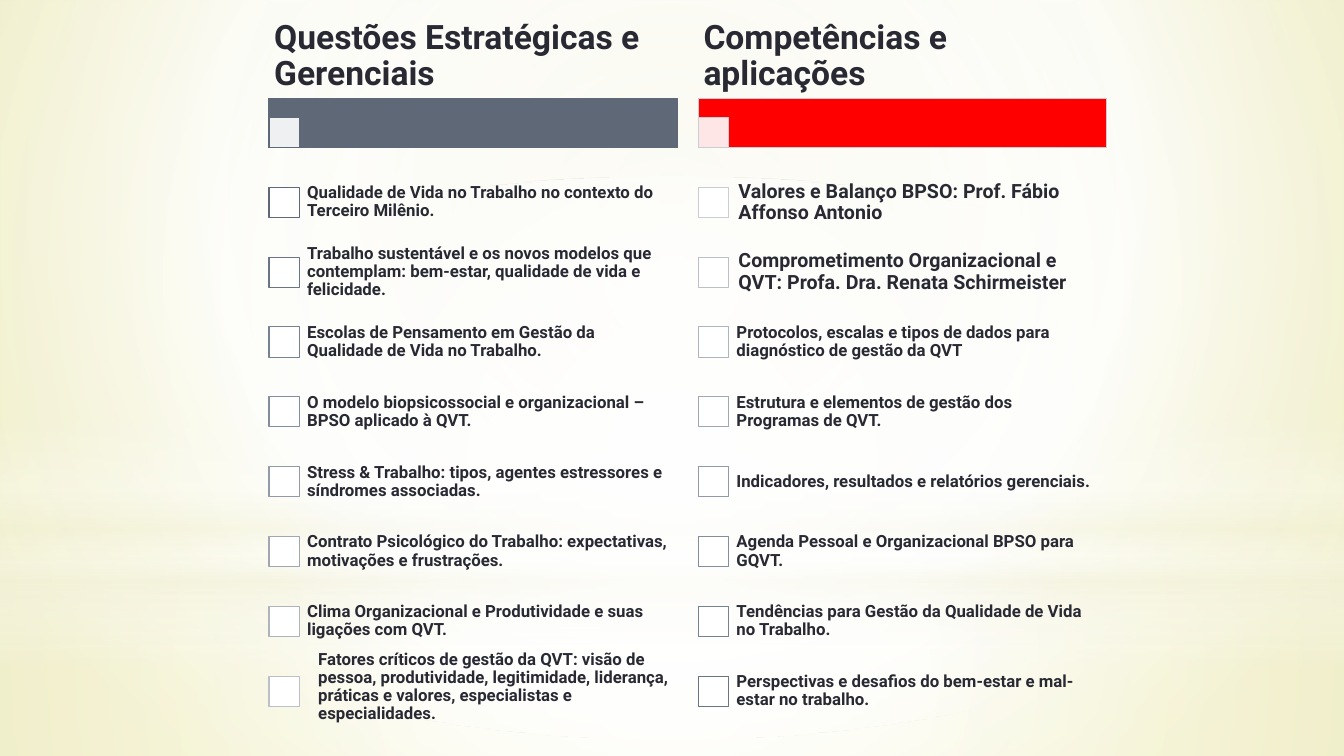
from lxml.etree import SubElement
from pptx import Presentation
from pptx.dml.color import RGBColor
from pptx.enum.shapes import MSO_SHAPE
from pptx.enum.text import MSO_ANCHOR
from pptx.oxml.ns import qn
from pptx.util import Cm, Pt

WIDE, HIGH = 33.87, 19.05
SIDE = 0.76
PITCH = 1.76
CENTER = (50, 50, 50, 50)
SHADES = ["5F6876", "6A7484", "768191", "848D9C", "929AA7",
          "A0A7B2", "AEB4BD", "BBC0C8", "C9CDD4"]

ISSUES = [
    "Qualidade de Vida no Trabalho no contexto do Terceiro Milênio.",
    "Trabalho sustentável e os novos modelos que contemplam: bem-estar, qualidade de vida e felicidade.",
    "Escolas de Pensamento em Gestão da Qualidade de Vida no Trabalho.",
    "O modelo biopsicossocial e organizacional – BPSO aplicado à QVT.",
    "Stress & Trabalho: tipos, agentes estressores e síndromes associadas.",
    "Contrato Psicológico do Trabalho: expectativas, motivações e frustrações.",
    "Clima Organizacional e Produtividade e suas ligações com QVT.",
    "Fatores críticos de gestão da QVT: visão de pessoa, produtividade, legitimidade, "
    "liderança, práticas e valores, especialistas e especialidades.",
]
SKILLS = [
    "Valores e Balanço BPSO: Prof. Fábio Affonso Antonio",
    "Comprometimento Organizacional e QVT: Profa. Dra. Renata Schirmeister",
    "Protocolos, escalas e tipos de dados para diagnóstico de gestão da QVT",
    "Estrutura e elementos de gestão dos Programas de QVT.",
    "Indicadores, resultados e relatórios gerenciais.",
    "Agenda Pessoal e Organizacional BPSO para GQVT.",
    "Tendências para Gestão da Qualidade de Vida no Trabalho.",
    "Perspectivas e desafios do bem-estar e mal-estar no trabalho.",
]


def color(code):
    return RGBColor.from_string(code)


def set_alpha(clr, share):
    SubElement(clr, qn("a:alpha"), val=str(share * 1000))


def add_grad(fill, root, stops, focus=None):
    fill.gradient()
    grad = next(root.iter(qn("a:gradFill")))
    for child in list(grad):
        grad.remove(child)
    gs_list = SubElement(grad, qn("a:gsLst"))
    for place, code, share in stops:
        stop = SubElement(gs_list, qn("a:gs"), pos=str(place * 1000))
        set_alpha(SubElement(stop, qn("a:srgbClr"), val=code), share)
    if focus:
        track = SubElement(grad, qn("a:path"), path="circle")
        sides = {side: str(n * 1000) for side, n in zip("ltrb", focus)}
        SubElement(track, qn("a:fillToRect"), **sides)
    else:
        SubElement(grad, qn("a:lin"), ang="5400000", scaled="0")


def add_block(slide, box, fill=None, line=None, alpha=None, kind=MSO_SHAPE.RECTANGLE):
    block = slide.shapes.add_shape(kind, *map(Cm, box))
    block.shadow.inherit = False
    if fill:
        block.fill.solid()
        block.fill.fore_color.rgb = color(fill)
        if alpha:
            set_alpha(next(block._element.spPr.iter(qn("a:srgbClr"))), alpha)
    if line:
        block.line.color.rgb = color(line)
        block.line.width = Pt(0.75)
    else:
        block.line.fill.background()
    return block


def add_text(slide, box, text, size=12, pad=(0.23, 0.23)):
    frame = slide.shapes.add_textbox(*map(Cm, box)).text_frame
    frame.word_wrap = True
    frame.vertical_anchor = MSO_ANCHOR.MIDDLE
    frame.margin_left = frame.margin_right = Cm(pad[0])
    frame.margin_top = frame.margin_bottom = Cm(pad[1])
    para = frame.paragraphs[0]
    para.line_spacing = 0.9
    run = para.add_run()
    run.text = text
    font = run.font
    font.name, font.size, font.bold = "Roboto", Pt(size), True
    font.color.rgb = color("292934")


def add_backdrop(slide):
    add_grad(slide.background.fill, slide._element,
             [(0, "EFEDCC", 100), (60, "FFFFFF", 100), (100, "E9E58A", 100)],
             (20, 10, 20, 60))
    layers = [
        (14.17, 4.88, MSO_SHAPE.RECTANGLE, CENTER,
         [(0, "FFFFFF", 91), (37, "FFFFFF", 76), (100, "F3F2DC", 79)]),
        (0, 14.17, MSO_SHAPE.RECTANGLE, CENTER,
         [(0, "FFFFFF", 89), (48, "FFFFFF", 62), (100, "F3F2DC", 79)]),
        (10.46, 6.35, MSO_SHAPE.RECTANGLE, None,
         [(0, "FFFFFF", 0), (29, "FFFFFF", 30), (45, "F3F2DC", 40),
          (55, "FFFFFF", 26), (65, "F3F2DC", 60), (100, "FFFFFF", 0)]),
        (4.45, 14.17, MSO_SHAPE.OVAL, CENTER,
         [(0, "FFFFFF", 100), (56, "FFFFFF", 0)]),
    ]
    for top, height, kind, focus, stops in layers:
        layer = add_block(slide, (0, top, WIDE, height), kind=kind)
        add_grad(layer.fill, layer._element, stops, focus)


def add_column(slide, box, title, items, fill, shades, large=0, shift=(0, 0)):
    left, top, width = box
    add_block(slide, (left, top + 2.16, width, 1.22), fill, shades[0])
    add_block(slide, (left, top + 2.62, SIDE, SIDE), "FFFFFF", shades[0], 90)
    add_text(slide, (left, top, width, 2.18), title, size=24, pad=(0.13, 0.08))
    for row, (item, shade) in enumerate(zip(items, shades)):
        y = top + 3.89 + row * PITCH
        add_block(slide, (left, y + 0.5, SIDE, SIDE), "FFFFFF", shade)
        dx, dy = shift if row == len(items) - 1 else (0, 0)
        style = {"size": 14, "pad": (0.28, 0.28)} if row < large else {}
        add_text(slide, (left + 0.73 + dx, y + dy, width - 0.72, PITCH), item, **style)


def main():
    deck = Presentation()
    deck.slide_width, deck.slide_height = Cm(WIDE), Cm(HIGH)
    slide = deck.slides.add_slide(deck.slide_layouts[6])
    add_backdrop(slide)
    add_column(slide, (6.78, 0.33, 10.29), "Questões Estratégicas e Gerenciais",
               ISSUES, SHADES[0], SHADES, shift=(0.28, -0.1))
    add_column(slide, (17.6, 0.33, 10.29), "Competências e aplicações",
               SKILLS, "FF0000", SHADES[::-1], large=2)
    deck.save("out.pptx")


if __name__ == "__main__":
    main()
